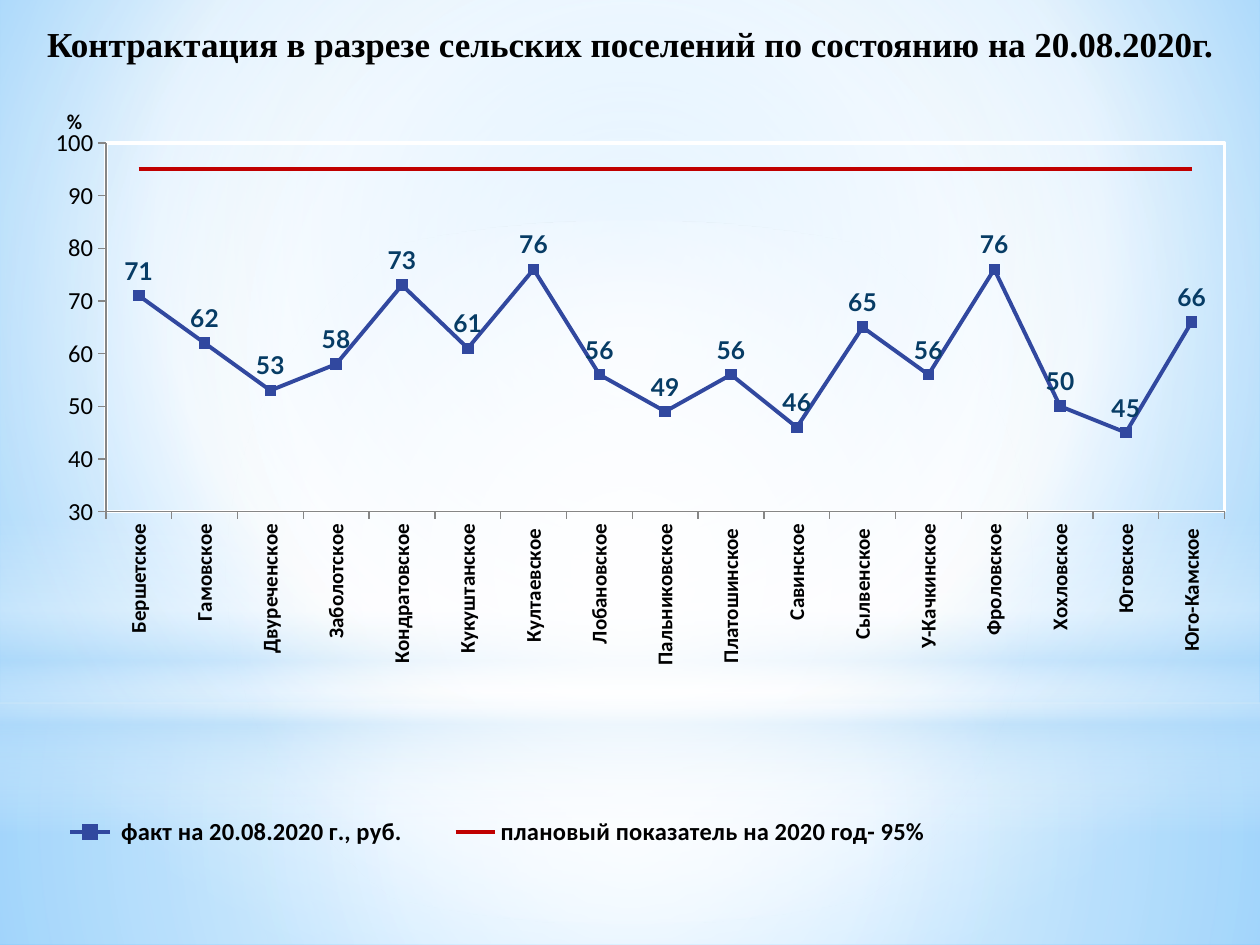
import pptx
import pptx.util
import pptx.oxml
import pptx.oxml.ns
import pptx.chart.data
import pptx.dml.color
import pptx.enum.chart
import pptx.enum.shapes
import pptx.enum.text

Inches = pptx.util.Inches
Pt = pptx.util.Pt
RGBColor = pptx.dml.color.RGBColor
qn = pptx.oxml.ns.qn
chartenum = pptx.enum.chart
SHAPE = pptx.enum.shapes.MSO_SHAPE

BLACK = RGBColor(0, 0, 0)
WHITE = RGBColor(255, 255, 255)
GRAY = RGBColor(0x86, 0x86, 0x86)
BLUE = RGBColor(0x31, 0x48, 0x9F)
NAVY = RGBColor(0x07, 0x3C, 0x65)
RED = RGBColor(0xC0, 0, 0)
PALE = RGBColor(0xB4, 0xDC, 0xFA)
SKY = RGBColor(0x9E, 0xD5, 0xFF)
DEEP = RGBColor(0x5B, 0xB9, 0xFF)

MID = (50, 50, 50, 50)
TITLE = "Контрактация в разрезе сельских поселений по состоянию на 20.08.2020г."
PLACES = ["Бершетское", "Гамовское", "Двуреченское", "Заболотское",
          "Кондратовское", "Кукуштанское", "Култаевское ", "Лобановское",
          "Пальниковское", "Платошинское ", "Савинское", "Сылвенское ",
          "У-Качкинское", "Фроловское", "Хохловское", "Юговское",
          "Юго-Камское "]
FACTS = [71, 62, 53, 58, 73, 61, 76, 56, 49, 56, 46, 65, 56, 76, 50, 45, 66]
GOAL = 95


def set_grad(node, stops, focus=None):
    marks = "".join(
        f'<a:gs pos="{pos * 1000}"><a:srgbClr val="{color}">'
        f'<a:alpha val="{alpha * 1000}"/></a:srgbClr></a:gs>'
        for pos, color, alpha in stops)
    if focus:
        sides = " ".join(f'{side}="{num * 1000}"' for side, num in zip("ltrb", focus))
        kind = f'<a:path path="circle"><a:fillToRect {sides}/></a:path>'
    else:
        kind = '<a:lin ang="5400000" scaled="0"/>'
    grad = pptx.oxml.parse_xml(
        f'<a:gradFill {pptx.oxml.ns.nsdecls("a")} rotWithShape="1">'
        f'<a:gsLst>{marks}</a:gsLst>{kind}</a:gradFill>')
    old = node.find(".//" + qn("a:solidFill"))
    old.getparent().replace(old, grad)


def add_glow(slide, kind, top, height, stops, focus=None):
    shape = slide.shapes.add_shape(kind, 0, Inches(top), Inches(10), Inches(height))
    shape.shadow.inherit = False
    shape.line.fill.background()
    shape.fill.solid()
    set_grad(shape._element, stops, focus)


def add_back(slide):
    slide.background.fill.solid()
    set_grad(slide._element.cSld,
             [(0, SKY, 100), (60, WHITE, 100), (100, DEEP, 100)], (20, 10, 20, 60))
    add_glow(slide, SHAPE.RECTANGLE, 5.58, 1.92,
             [(0, WHITE, 91), (37, WHITE, 76), (100, PALE, 79)], MID)
    add_glow(slide, SHAPE.RECTANGLE, 0, 5.58,
             [(0, WHITE, 89), (48, WHITE, 62), (100, PALE, 79)], MID)
    add_glow(slide, SHAPE.RECTANGLE, 4.12, 2.5,
             [(0, WHITE, 0), (29, WHITE, 30), (45, PALE, 40),
              (55, WHITE, 26), (65, PALE, 60), (100, WHITE, 0)])
    add_glow(slide, SHAPE.OVAL, 1.75, 5.58, [(0, WHITE, 100), (56, WHITE, 0)], MID)


def set_font(font, name, size, color=BLACK, bold=False):
    font.name = name
    font.size = Pt(size)
    font.color.rgb = color
    font.bold = bold


def add_title(slide):
    title = slide.shapes.title
    slide.shapes._spTree.append(title._element)
    title.left, title.top = Inches(0.2), Inches(0.13)
    title.width, title.height = Inches(9.61), Inches(0.63)
    frame = title.text_frame
    frame.word_wrap = True
    frame.margin_left = frame.margin_right = 0
    frame.vertical_anchor = pptx.enum.text.MSO_ANCHOR.TOP
    para = frame.paragraphs[0]
    para.alignment = pptx.enum.text.PP_ALIGN.CENTER
    run = para.add_run()
    run.text = TITLE
    set_font(run.font, "Times New Roman", 20, bold=True)


def set_place(node, index, inner=False, **sizes):
    for old in node.findall(qn("c:layout")):
        node.remove(old)
    target = '<c:layoutTarget val="inner"/>' if inner else ""
    modes = "".join(f'<c:{key}Mode val="edge"/>' for key in "xy")
    vals = "".join(f'<c:{key} val="{val}"/>' for key, val in sizes.items())
    node.insert(index, pptx.oxml.parse_xml(
        f'<c:layout {pptx.oxml.ns.nsdecls("c")}><c:manualLayout>'
        f'{target}{modes}{vals}</c:manualLayout></c:layout>'))


def set_axes(chart):
    cat, val = chart.category_axis, chart.value_axis
    for axis, size in ((cat, 12), (val, 14)):
        axis.has_major_gridlines = False
        axis.major_tick_mark = chartenum.XL_TICK_MARK.OUTSIDE
        axis.format.line.color.rgb = GRAY
        axis.format.line.width = Pt(0.75)
        set_font(axis.tick_labels.font, "Calibri", size, bold=axis is cat)
    cat._element.find(".//" + qn("a:bodyPr")).set("rot", "-5400000")
    val.minimum_scale, val.maximum_scale, val.major_unit = 30, 100, 10
    val.tick_labels.number_format = "#,##0"
    val.tick_labels.number_format_is_linked = False
    frame = val.axis_title.text_frame
    run = frame.paragraphs[0].add_run()
    run.text = "%"
    set_font(run.font, "Calibri", 12, bold=True)
    frame._txBody.find(qn("a:bodyPr")).set("rot", "0")
    set_place(val.axis_title._element, 1, x=0.05, y=0.01)


def set_line(series, color):
    series.smooth = False
    series.format.line.color.rgb = color
    series.format.line.width = Pt(2.25)
    series.marker.style = chartenum.XL_MARKER_STYLE.NONE


def set_marks(series):
    mark = series.marker
    mark.style = chartenum.XL_MARKER_STYLE.SQUARE
    mark.size = 6
    mark.format.fill.solid()
    mark.format.fill.fore_color.rgb = BLUE
    mark.format.line.color.rgb = BLUE
    tags = series.data_labels
    tags.show_value = True
    tags.position = chartenum.XL_LABEL_POSITION.ABOVE
    tags.number_format = "#,##0"
    tags.number_format_is_linked = False
    set_font(tags.font, "Lato", 14, NAVY, True)


def set_plot(chart):
    area = chart._chartSpace.find(".//" + qn("c:plotArea"))
    set_place(area, 0, True, x=0.084, y=0.058, w=0.888, h=0.453)
    area.append(pptx.oxml.parse_xml(
        f'<c:spPr {pptx.oxml.ns.nsdecls("c", "a")}><a:noFill/><a:ln w="25400">'
        f'<a:solidFill><a:srgbClr val="{WHITE}"/></a:solidFill></a:ln></c:spPr>'))


def add_chart(slide):
    data = pptx.chart.data.CategoryChartData()
    data.categories = PLACES
    data.add_series(" факт на 20.08.2020 г., руб.", FACTS)
    data.add_series("плановый показатель на 2020 год- 95%", [GOAL] * len(PLACES))
    chart = slide.shapes.add_chart(
        chartenum.XL_CHART_TYPE.LINE_MARKERS, 0, Inches(0.76),
        Inches(10), Inches(6.46), data).chart
    chart.has_title = False
    set_font(chart.font, "Lato", 18)
    chart.plots[0].vary_by_categories = False
    set_axes(chart)
    fact, goal = chart.series
    set_line(fact, BLUE)
    set_line(goal, RED)
    set_marks(fact)
    set_plot(chart)
    chart.has_legend = True
    legend = chart.legend
    legend.position = chartenum.XL_LEGEND_POSITION.BOTTOM
    legend.include_in_layout = False
    set_font(legend.font, "Calibri", 14, bold=True)
    set_place(legend._element, 1, x=0.02, y=0.87, w=0.75, h=0.07)


def main():
    deck = pptx.Presentation()
    deck.slide_width, deck.slide_height = Inches(10), Inches(7.5)
    slide = deck.slides.add_slide(deck.slide_layouts[5])
    add_back(slide)
    add_title(slide)
    add_chart(slide)
    deck.save("out.pptx")


if __name__ == "__main__":
    main()
